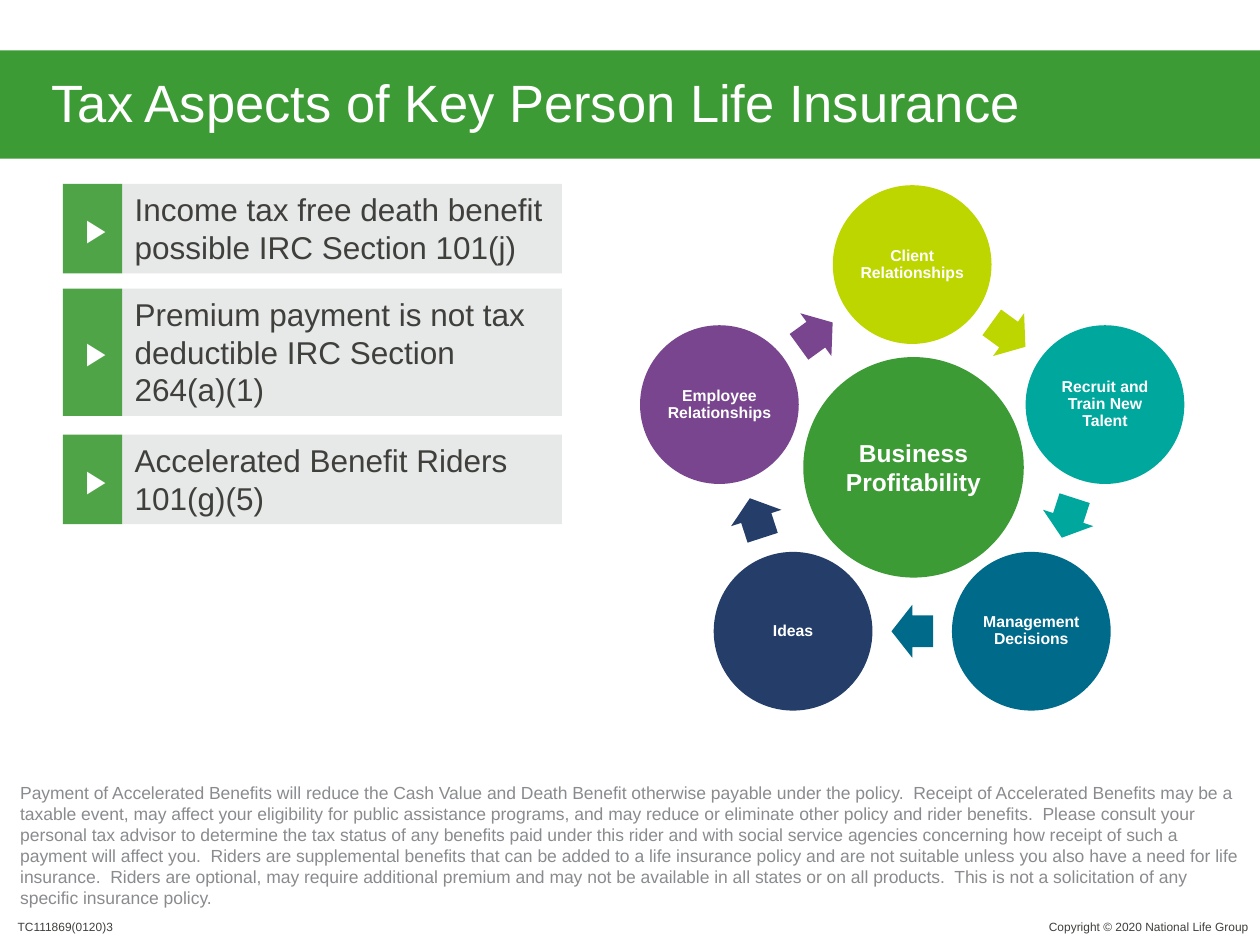
import math

from lxml import etree
from pptx import Presentation
from pptx.dml.color import RGBColor
from pptx.enum import shapes, text
from pptx.oxml import ns
from pptx.util import Inches, Pt

WHITE = RGBColor(0xFF, 0xFF, 0xFF)
GREEN = RGBColor(0x3D, 0x9B, 0x35)
PALE = RGBColor(0xE7, 0xE8, 0xE8)
INK = RGBColor(0x3F, 0x40, 0x3C)
GRAY = RGBColor(0x89, 0x8B, 0x8E)
LIME = RGBColor(0xBD, 0xD6, 0x00)
TEAL = RGBColor(0x00, 0xA7, 0x9D)
BLUE = RGBColor(0x00, 0x6A, 0x8B)
NAVY = RGBColor(0x25, 0x3E, 0x69)
PURPLE = RGBColor(0x78, 0x45, 0x8E)

FONT = "Arial"
SHAPE = shapes.MSO_SHAPE
LEFT, CENTER, RIGHT = text.PP_ALIGN.LEFT, text.PP_ALIGN.CENTER, text.PP_ALIGN.RIGHT
TOP, MIDDLE, BOTTOM = text.MSO_ANCHOR.TOP, text.MSO_ANCHOR.MIDDLE, text.MSO_ANCHOR.BOTTOM

TITLE = "Tax Aspects of Key Person Life Insurance"
POINTS = [
    (1.46, 0.71, "Income tax free death benefit possible IRC Section 101(j)"),
    (2.29, 1.01, "Premium payment is not tax deductible IRC Section 264(a)(1)"),
    (3.45, 0.71, "Accelerated Benefit Riders 101(g)(5)"),
]
STAGES = [
    ("Client Relationships", LIME),
    ("Recruit and Train New Talent", TEAL),
    ("Management Decisions", BLUE),
    ("Ideas", NAVY),
    ("Employee Relationships", PURPLE),
]
DISCLOSURES = [
    "Payment of Accelerated Benefits will reduce the Cash Value and Death Benefit "
    "otherwise payable under the policy.",
    "Receipt of Accelerated Benefits may be a taxable event, may affect your "
    "eligibility for public assistance programs, and may reduce or eliminate other "
    "policy and rider benefits.",
    "Please consult your personal tax advisor to determine the tax status of any "
    "benefits paid under this rider and with social service agencies concerning how "
    "receipt of such a payment will affect you.",
    "Riders are supplemental benefits that can be added to a life insurance policy "
    "and are not suitable unless you also have a need for life insurance.",
    "Riders are optional, may require additional premium and may not be available in "
    "all states or on all products.",
    "This is not a solicitation of any specific insurance policy.",
]
SENTENCE_GAP = "  "


def write(shape, words, size, color, align=LEFT, anchor=TOP,
          insets=(0, 0, 0, 0), bold=False, spacing=None):
    frame = shape.text_frame
    frame.word_wrap = True
    frame.vertical_anchor = anchor
    (frame.margin_left, frame.margin_top,
     frame.margin_right, frame.margin_bottom) = map(Inches, insets)
    para = frame.paragraphs[0]
    para.alignment = align
    if spacing:
        para.line_spacing = spacing
    span = para.add_run()
    span.text = words
    span.font.name = FONT
    span.font.size = Pt(size)
    span.font.bold = bold
    span.font.color.rgb = color


def add_block(page, kind, box, color):
    shape = page.shapes.add_shape(kind, *map(Inches, box))
    shape.shadow.inherit = False
    shape.fill.solid()
    shape.fill.fore_color.rgb = color
    shape.line.fill.background()
    return shape


def add_disc(page, center_x, center_y, size, color):
    box = (center_x - size / 2, center_y - size / 2, size, size)
    return add_block(page, SHAPE.OVAL, box, color)


def add_note(page, box, words, size, color, **style):
    write(page.shapes.add_textbox(*map(Inches, box)), words, size, color, **style)


def add_title(page, box):
    band = add_block(page, SHAPE.RECTANGLE, box, GREEN)
    write(band, TITLE, 30, WHITE, anchor=BOTTOM, insets=(0.41, 0.2, 0.4, 0.2), spacing=0.9)


def add_point(page, box, words):
    left, top, width, height = box
    tab_width = 0.47
    panel = add_block(page, SHAPE.RECTANGLE,
                      (left + tab_width, top, width - tab_width, height), PALE)
    write(panel, words, 18, INK, insets=(0.1, 0.05, 0.1, 0.05))
    tab = add_block(page, SHAPE.PENTAGON, (left, top, tab_width, height), GREEN)
    tab.adjustments[0] = 0
    tint = tab.fill._xPr.find(".//" + ns.qn("a:srgbClr"))
    etree.SubElement(tint, ns.qn("a:alpha"), val="90000")
    write(tab, "▶", 18, WHITE, CENTER, MIDDLE, (0.15, 0.05, 0.1, 0.05))


def add_cycle(page, box):
    left, top, width, height = box
    disc, hub, arrow_width, arrow_height = 1.26, 1.75, 0.33, 0.42
    step = 360 / len(STAGES)
    radius = (width - disc) / 2 / math.sin(math.radians(step))
    middle_x, middle_y = left + width / 2, top + disc / 2 + radius

    def spot(degrees, reach):
        angle = math.radians(degrees)
        return middle_x + reach * math.sin(angle), middle_y - reach * math.cos(angle)

    for index, (words, color) in enumerate(STAGES):
        stage = add_disc(page, *spot(index * step, radius), disc, color)
        write(stage, words, 9, WHITE, CENTER, MIDDLE, (0.01,) * 4, True, 0.9)
        turn = (index + 0.5) * step
        x, y = spot(turn, radius * math.cos(math.radians(step / 2)))
        arrow = add_block(page, SHAPE.RIGHT_ARROW,
                          (x - arrow_width / 2, y - arrow_height / 2,
                           arrow_width, arrow_height), color)
        arrow.adjustments[0] = 0.6
        arrow.adjustments[1] = 0.5
        arrow.rotation = turn

    core = add_disc(page, middle_x + 0.01, middle_y, hub, GREEN)
    write(core, "Business Profitability", 14, WHITE, CENTER, MIDDLE, bold=True)


def add_footer(page, box):
    left, top, width, height = box
    code_width, owner_width = 1.04, 2.25
    add_note(page, (left, top, code_width, height), "TC111869(0120)3", 6.8, INK)
    add_note(page, (left + width - owner_width, top, owner_width, height),
             "Copyright © 2020 National Life Group", 6.8, INK, align=RIGHT, anchor=MIDDLE)


def main():
    deck = Presentation()
    deck.slide_width, deck.slide_height = Inches(10), Inches(7.5)
    page = deck.slides.add_slide(deck.slide_layouts[6])
    add_footer(page, (0.14, 7.3, 9.77, 0.11))
    add_title(page, (0, 0.4, 10, 0.86))
    for top, height, words in POINTS:
        add_point(page, (0.5, top, 3.96, height), words)
    add_cycle(page, (5.08, 1.47, 4.32, 4.16))
    add_note(page, (0.16, 6.05, 9.72, 1.16), SENTENCE_GAP.join(DISCLOSURES),
             10, GRAY, anchor=BOTTOM)
    deck.save("out.pptx")


if __name__ == "__main__":
    main()
